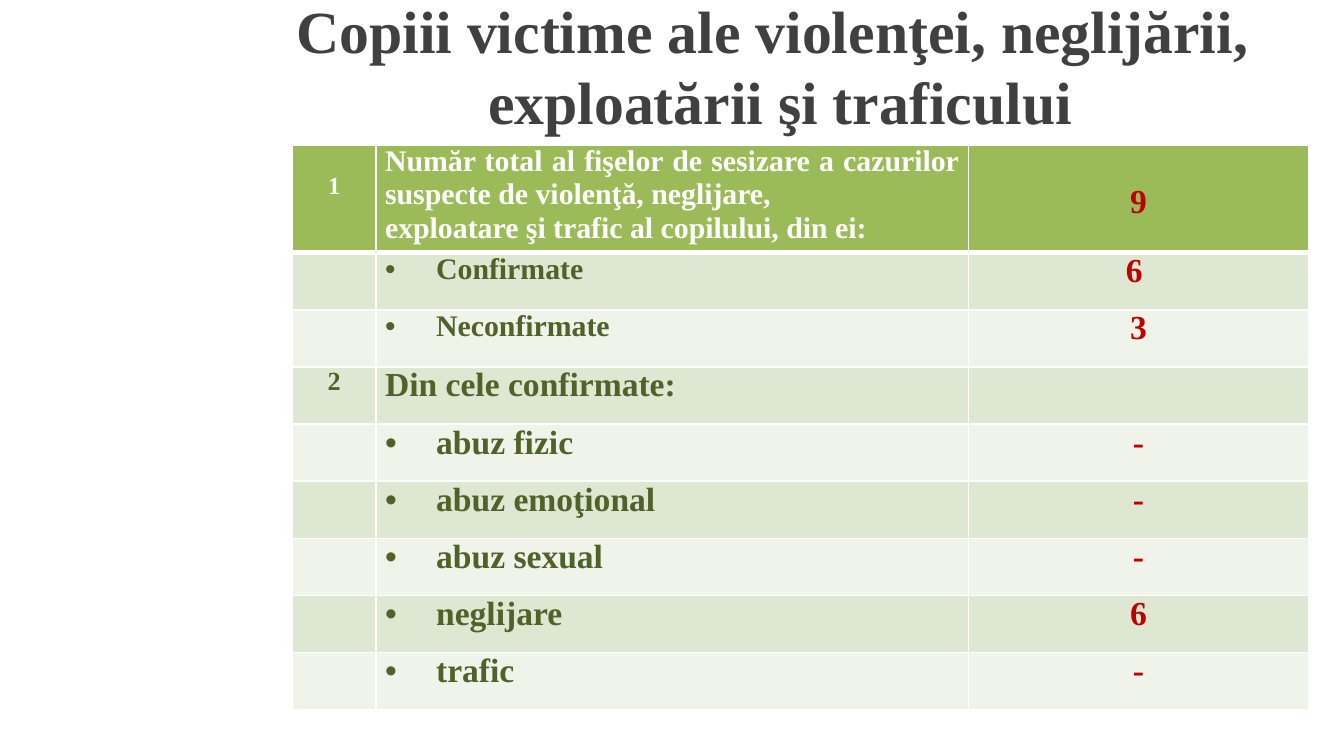
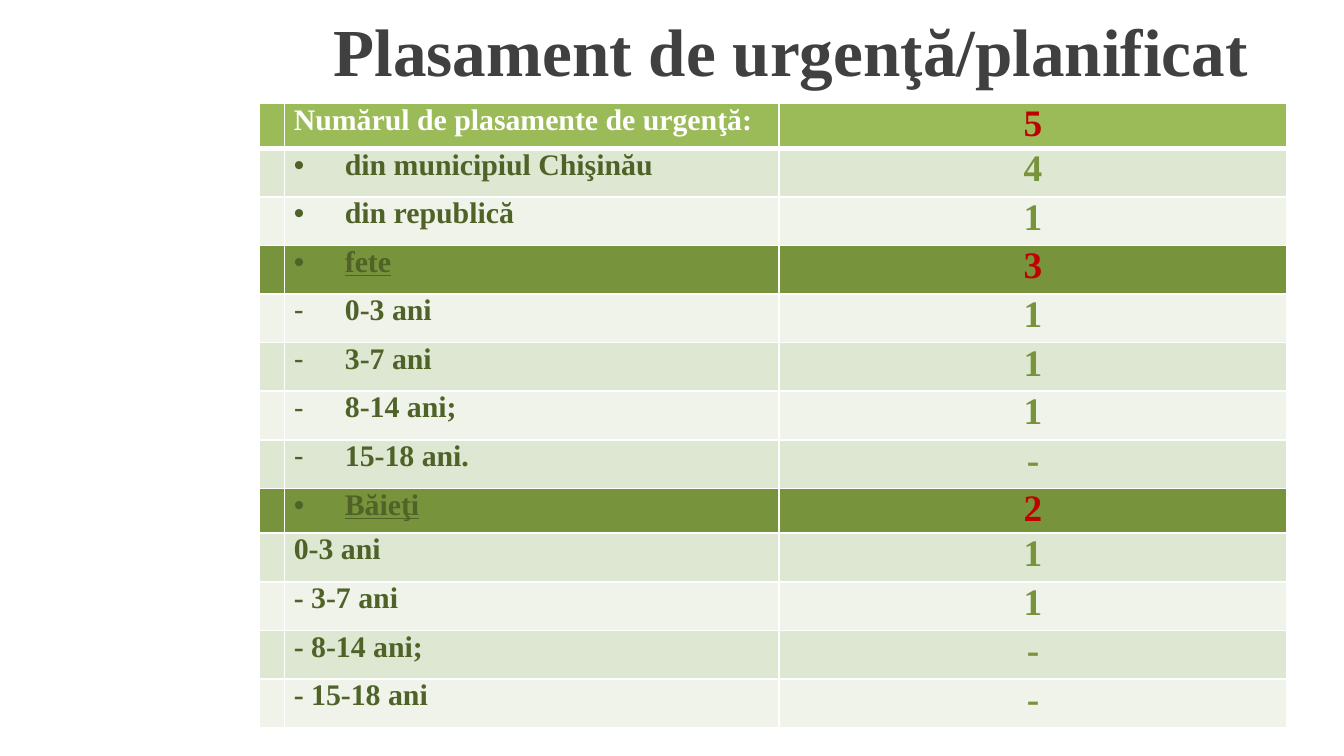
from lxml.etree import SubElement
from pptx import Presentation
from pptx.dml.color import RGBColor
from pptx.enum.text import MSO_ANCHOR, PP_ALIGN
from pptx.oxml import parse_xml
from pptx.oxml.ns import nsdecls, qn
from pptx.util import Emu, Inches, Pt

SLIDE_WIDTH = Inches(10)
SLIDE_HEIGHT = Emu(SLIDE_WIDTH * 9 // 16)
GRID = 100
FONT = "Times New Roman"
COLOURS = {
    "title": "404040", "header": "9BBB59", "group": "77933C",
    "dark band": "DEE7D1", "light band": "EFF3EA", "white": "FFFFFF",
    "label": "4F6228", "red": "C00000", "green": "77933C",
}
BULLET, DASH = "•", "-"
INDENT = Inches(0.38)
SIDE_MARGIN = Inches(0.07)
LINE_HEIGHT = 1.15

CASE_ROWS = [
    ("1", "Număr total al fişelor de sesizare a cazurilor suspecte de violenţă, neglijare, \n"
          "exploatare şi trafic al copilului, din ei:", None, "9"),
    ("", "Confirmate", BULLET, "6 "),
    ("", "Neconfirmate", BULLET, "3"),
    ("2", "Din cele confirmate:", None, ""),
    ("", "abuz fizic", BULLET, "-"),
    ("", "abuz emoţional", BULLET, "-"),
    ("", "abuz sexual", BULLET, "-"),
    ("", "neglijare", BULLET, "6"),
    ("", "trafic", BULLET, "-"),
]
PLACEMENT_ROWS = [
    ("", "Numărul de plasamente de urgenţă:", None, "5"),
    ("", "din municipiul Chişinău", BULLET, "4"),
    ("", "din republică", BULLET, "1"),
    ("", "fete", BULLET, "3"),
    ("", "0-3 ani", DASH, "1"),
    ("", "3-7 ani", DASH, "1"),
    ("", "8-14 ani;", DASH, "1"),
    ("", "15-18 ani.", DASH, "-"),
    ("", "Băieţi", BULLET, "2"),
    ("", "0-3 ani", None, "1"),
    ("", "- 3-7 ani", None, "1"),
    ("", "- 8-14 ani;", None, "-"),
    ("", "- 15-18 ani", None, "-"),
]
GROUP_ROWS = (3, 8)


def across(columns):
    return Emu(round(SLIDE_WIDTH * columns / GRID))


def down(rows):
    return Emu(round(SLIDE_HEIGHT * rows / GRID))


def colour(name):
    return RGBColor.from_string(COLOURS[name])


def style_font(font, size, colour_name, **extra):
    values = {"name": FONT, "size": Pt(size), "bold": True, **extra}
    for attribute, value in values.items():
        setattr(font, attribute, value)
    font.color.rgb = colour(colour_name)


def add_title(page, text, left, top, width, height, size):
    box = page.shapes.add_textbox(across(left), down(top), across(width), down(height))
    frame = box.text_frame
    frame.word_wrap = True
    frame.vertical_anchor = MSO_ANCHOR.MIDDLE
    para = frame.paragraphs[0]
    para.text = text
    para.alignment = PP_ALIGN.CENTER
    for span in para.runs:
        style_font(span.font, size, "title")


def add_bullet(para, marker):
    properties = para._p.get_or_add_pPr()
    properties.set("marL", str(INDENT))
    properties.set("indent", str(-INDENT))
    SubElement(properties, qn("a:buFont"), typeface="Arial")
    SubElement(properties, qn("a:buChar"), char=marker)


def style_paragraph_end(para, size):
    ending = SubElement(para._p, qn("a:endParaRPr"), sz=str(size * 100), b="1")
    SubElement(ending, qn("a:latin"), typeface=FONT)


def set_borders(cell, top=1, bottom=1):
    properties = cell._tc.get_or_add_tcPr()
    widths = {"lnL": 1, "lnR": 1, "lnT": top, "lnB": bottom}
    for place, (side, width) in enumerate(widths.items()):
        properties.insert(place, parse_xml(
            f'<a:{side} {nsdecls("a")} w="{Pt(width)}"><a:solidFill>'
            f'<a:srgbClr val="{COLOURS["white"]}"/></a:solidFill></a:{side}>'))


def fill_cell(cell, text, fill, alignment, size, colour_name, marker=None, lines_above=0, **extra):
    margins = {
        "margin_left": SIDE_MARGIN, "margin_right": SIDE_MARGIN,
        "margin_top": Pt(size * LINE_HEIGHT * lines_above), "margin_bottom": 0,
    }
    for attribute, value in margins.items():
        setattr(cell, attribute, value)
    cell.fill.solid()
    cell.fill.fore_color.rgb = colour(fill)
    cell.text_frame.text = text
    for para in cell.text_frame.paragraphs:
        para.alignment = alignment
        if marker:
            add_bullet(para, marker)
        for span in para.runs:
            style_font(span.font, size, colour_name, **extra)
        style_paragraph_end(para, size)


def row_fill(index, groups):
    if index == 0:
        return "header"
    if index in groups:
        return "group"
    return "dark band" if index % 2 else "light band"


def add_data_table(page, rows, left, top, columns, heights, label_size, value_size,
                   value_colour, groups=(), lines_above=0):
    frame = page.shapes.add_table(len(rows), len(columns), across(left), down(top),
                                  across(sum(columns)), down(sum(heights)))
    table = frame.table
    for flag in ("first_row", "horz_banding"):
        setattr(table, flag, False)
    for column, width in zip(table.columns, columns):
        column.width = across(width)
    for index, (number, label, marker, value) in enumerate(rows):
        table.rows[index].height = down(heights[index])
        header, group = index == 0, index in groups
        fill = row_fill(index, groups)
        text_colour = "white" if header else "label"
        above = lines_above if header else 0
        number_cell, label_cell, value_cell = table.rows[index].cells
        fill_cell(number_cell, number, fill, PP_ALIGN.CENTER, 13 if header else 14,
                  text_colour, lines_above=above)
        fill_cell(label_cell, label, fill, PP_ALIGN.JUSTIFY, label_size(index), text_colour,
                  marker, underline=group)
        fill_cell(value_cell, value, fill, PP_ALIGN.CENTER, value_size,
                  "red" if header or group else value_colour, lines_above=above)
        for cell in (number_cell, label_cell, value_cell):
            set_borders(cell, top=3 if index == 1 else 1, bottom=3 if header else 1)


def add_cases_page(deck):
    page = deck.slides.add_slide(deck.slide_layouts[6])
    add_title(page, "Copiii victime ale violenţei, neglijării, \vexploatării şi traficului",
              16.15, 0, 83.85, 17.24, 32)
    add_data_table(page, CASE_ROWS, 21.76, 19.2, (6.2, 44.1, 25.3), [7.56] * len(CASE_ROWS),
                   lambda index: 16 if index < 3 else 18, 18, "red", lines_above=1)


def add_placements_page(deck):
    page = deck.slides.add_slide(deck.slide_layouts[6])
    add_title(page, "Plasament de urgenţă/planificat", 17.7, 2.45, 82.3, 8.36, 36)
    special_heights = {0: 4.09, 8: 4.98}
    heights = [special_heights.get(index, 6.43) for index in range(len(PLACEMENT_ROWS))]
    add_data_table(page, PLACEMENT_ROWS, 19.32, 13.69, (1.85, 36.8, 37.8), heights,
                   lambda index: 16, 20, "green", GROUP_ROWS)


def main():
    deck = Presentation()
    deck.slide_width, deck.slide_height = SLIDE_WIDTH, SLIDE_HEIGHT
    add_cases_page(deck)
    add_placements_page(deck)
    deck.save("out.pptx")


if __name__ == "__main__":
    main()
